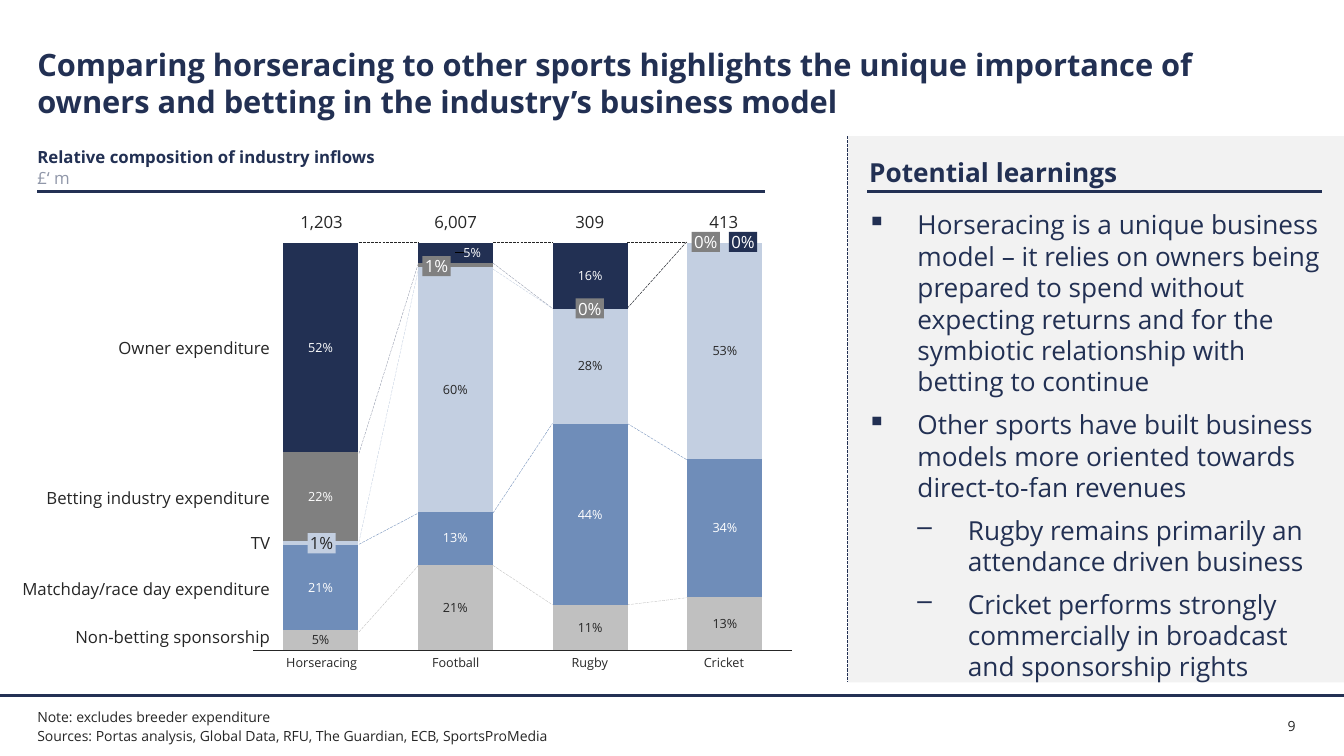
from lxml.etree import SubElement
from pptx import Presentation
from pptx.chart.data import CategoryChartData
from pptx.dml.color import RGBColor
from pptx.enum.chart import XL_CHART_TYPE, XL_LABEL_POSITION, XL_TICK_LABEL_POSITION, XL_TICK_MARK
from pptx.enum.dml import MSO_LINE
from pptx.enum.shapes import MSO_CONNECTOR, MSO_SHAPE
from pptx.enum.text import MSO_ANCHOR, PP_ALIGN
from pptx.oxml import parse_xml
from pptx.oxml.ns import nsdecls, qn
from pptx.util import Pt

PX = 9144
FONT = "Open Sans"
NAVY = RGBColor(0x22, 0x30, 0x53)
RULE = RGBColor(0x23, 0x31, 0x54)
INK = RGBColor(0x26, 0x26, 0x26)
MUTED = RGBColor(0x90, 0x97, 0xA9)
PANEL = RGBColor(0xF2, 0xF2, 0xF2)
SILVER = RGBColor(0xC0, 0xC0, 0xC0)
BLUE = RGBColor(0x6F, 0x8D, 0xB9)
PALE = RGBColor(0xC3, 0xCF, 0xE1)
GREY = RGBColor(0x80, 0x80, 0x80)
WHITE = RGBColor(0xFF, 0xFF, 0xFF)

SPORTS = [("Horseracing", "1,203"), ("Football", "6,007"), ("Rugby", "309"), ("Cricket", "413")]
COLUMN_STEP = 133
SERIES = [
    ("Non-betting sponsorship", (5, 21, 11, 13), SILVER, INK, (0, 1, 2, 3), 632),
    ("Matchday/race day expenditure", (21, 13, 44, 34), BLUE, WHITE, (0, 1, 2, 3), 584),
    ("TV", (1, 60, 28, 53), PALE, INK, (1, 2, 3), 539),
    ("Betting industry expenditure", (22, 1, 0, 0), GREY, WHITE, (0,), 494),
    ("Owner expenditure", (52, 5, 16, 0), NAVY, WHITE, (0, 1, 2), 345),
]
BRIDGES = [
    [(240, 240, INK), (450, 261, MUTED), (538, 267, PALE), (540, 509, BLUE), (627, 561, SILVER)],
    [(240, 240, INK), (261, 306, MUTED), (267, 306, PALE), (509, 420, BLUE), (561, 600, SILVER)],
    [(240, 240, INK), (306, 240, MUTED), (306, 240, INK), (420, 456, BLUE), (600, 593, SILVER)],
]
TAGS = [
    ("1%", 419, 254, GREY, WHITE), ("1%", 305, 529, PALE, INK), ("0%", 571, 296, GREY, WHITE),
    ("0%", 686, 230, GREY, WHITE), ("0%", 723, 230, NAVY, WHITE),
]
LEARNINGS = [
    (0, "Horseracing is a unique business model – it relies on owners being prepared to spend "
        "without expecting returns and for the symbiotic relationship with betting to continue"),
    (0, "Other sports have built business models more oriented towards direct-to-fan revenues"),
    (1, "Rugby remains primarily an attendance driven business"),
    (1, "Cricket performs strongly commercially in broadcast and sponsorship rights"),
]


def set_font(font, size, color, bold=False):
    """Apply typeface, size, colour and weight."""
    font.name, font.size, font.bold = FONT, Pt(size), bold
    font.color.rgb = color


def write(shape, text, size, color, bold=False, align=PP_ALIGN.LEFT, anchor=MSO_ANCHOR.TOP, wrap=True):
    """Fill a shape with text without margins and return its paragraphs."""
    frame = shape.text_frame
    frame.text = text
    frame.word_wrap, frame.vertical_anchor = wrap, anchor
    frame.margin_left = frame.margin_right = frame.margin_top = frame.margin_bottom = 0
    for paragraph in frame.paragraphs:
        paragraph.alignment = align
        for run in paragraph.runs:
            set_font(run.font, size, color, bold)
    return frame.paragraphs


def add_text(slide, box, text, size, color, **style):
    """Add a text box and return its paragraphs."""
    shape = slide.shapes.add_textbox(*(value * PX for value in box))
    return write(shape, text, size, color, **style)


def add_rectangle(slide, box, color):
    """Add a plain filled rectangle."""
    shape = slide.shapes.add_shape(MSO_SHAPE.RECTANGLE, *(value * PX for value in box))
    shape.shadow.inherit = False
    shape.fill.solid()
    shape.fill.fore_color.rgb = color
    shape.line.fill.background()
    return shape


def add_line(slide, start, end, color, width, dash=None):
    """Add a straight line without a shadow."""
    points = (value * PX for value in start + end)
    line = slide.shapes.add_connector(MSO_CONNECTOR.STRAIGHT, *points)
    line.line.color.rgb = color
    line.line.width = Pt(width)
    if dash:
        line.line.dash_style = dash
    SubElement(line._element.spPr, qn("a:effectLst"))


def manual_layout(**values):
    """Build a chart layout element from its named values."""
    items = "".join(f'<c:{name} val="{value}"/>' for name, value in values.items())
    return parse_xml(f'<c:layout {nsdecls("c")}><c:manualLayout>{items}</c:manualLayout></c:layout>')


def add_inflow_chart(slide):
    """Add the stacked composition chart with its labels."""
    data = CategoryChartData(number_format='0"%"')
    data.categories = [sport for sport, _ in SPORTS]
    for name, values, *_ in SERIES:
        data.add_series(name, values)
    box = (value * PX for value in (240, 228, 557, 430))
    chart = slide.shapes.add_chart(XL_CHART_TYPE.COLUMN_STACKED_100, *box, data).chart
    set_font(chart.font, 10, INK)
    chart.has_legend = chart.has_title = False
    chart.value_axis.has_major_gridlines = False
    chart.value_axis.visible = False
    axis = chart.category_axis
    axis.tick_label_position = XL_TICK_LABEL_POSITION.NONE
    axis.major_tick_mark = axis.minor_tick_mark = XL_TICK_MARK.NONE
    axis.format.line.color.rgb = INK
    axis.format.line.width = Pt(0.75)
    plot = chart.plots[0]
    plot.gap_width, plot.overlap, plot.vary_by_categories = 80, 100, False
    for series, (_, _, color, label_color, labelled, _) in zip(plot.series, SERIES):
        series.format.fill.solid()
        series.format.fill.fore_color.rgb = color
        series.data_labels.show_value = False
        for index in labelled:
            label = series.points[index].data_label
            set_font(label.font, 9, label_color)
            label.position = XL_LABEL_POSITION.CENTER
    area = chart._chartSpace.chart.plotArea
    for layout in area.findall(qn("c:layout")):
        area.remove(layout)
    area.insert(0, manual_layout(layoutTarget="inner", xMode="edge", yMode="edge",
                                 x=0.02, y=0.03, w=0.96, h=0.94))
    football_owner = plot.series[4]._element.findall(".//" + qn("c:dLbl"))[1]
    for layout in football_owner.findall(qn("c:layout")):
        football_owner.remove(layout)
    football_owner.insert(1, manual_layout(x=0.03, y=0))


def add_learnings(slide):
    """Add the panel with its heading and bulleted learnings."""
    add_text(slide, (862, 155, 449, 31), "Potential learnings", 18.7, NAVY,
             bold=True, anchor=MSO_ANCHOR.BOTTOM)
    add_line(slide, (860, 190), (1311, 190), RULE, 1.5)
    text = "\n".join(learning for _, learning in LEARNINGS)
    paragraphs = add_text(slide, (845, 207, 466, 474), text, 18.7, NAVY)
    for paragraph, (level, _) in zip(paragraphs, LEARNINGS):
        properties = paragraph._p.get_or_add_pPr()
        properties.set("marL", str((65 + 50 * level) * PX))
        properties.set("indent", str(-50 * PX))
        bullet_color = SubElement(properties, qn("a:buClr"))
        SubElement(bullet_color, qn("a:srgbClr")).set("val", str(NAVY))
        SubElement(properties, qn("a:buChar")).set("char", "▪–"[level])
        paragraph.level = level
        paragraph.space_after = Pt(8)


def main():
    """Build the slide and save it."""
    presentation = Presentation()
    presentation.slide_width, presentation.slide_height = 1333 * PX, 750 * PX
    slide = presentation.slides.add_slide(presentation.slide_layouts[6])

    add_line(slide, (0, 690), (1333, 690), RULE, 2)
    add_text(slide, (1277, 709, 50, 20), "9", 10, INK, anchor=MSO_ANCHOR.BOTTOM)
    add_rectangle(slide, (841, 135, 492, 542), PANEL)
    add_line(slide, (841, 135), (841, 676), NAVY, 0.75, MSO_LINE.SQUARE_DOT)
    add_text(slide, (37, 45, 1260, 82),
             "Comparing horseracing to other sports highlights the unique importance of owners "
             "and betting in the industry’s business model", 22, NAVY, bold=True)
    subtitle = add_text(slide, (37, 146, 585, 40),
                        "Relative composition of industry inflows\n£‘ m", 12, NAVY, bold=True)
    set_font(subtitle[1].runs[0].font, 12, MUTED)
    add_line(slide, (37, 190), (759, 190), RULE, 1.5)
    notes = add_text(slide, (37, 701, 1123, 39),
                     "Note: excludes breeder expenditure\n"
                     "Sources: Portas analysis, Global Data, RFU, The Guardian, ECB, SportsProMedia",
                     10, INK, anchor=MSO_ANCHOR.MIDDLE)
    notes[1].space_before = Pt(2)

    for gap, bridges in enumerate(BRIDGES):
        left = 356 + gap * COLUMN_STEP
        for start, end, color in bridges:
            add_line(slide, (left, start), (left + 59, end), color, 0.25, MSO_LINE.LONG_DASH)
    add_inflow_chart(slide)
    for column, (sport, total) in enumerate(SPORTS):
        left = 264 + column * COLUMN_STEP
        add_text(slide, (left, 210, 110, 20), total, 12, INK,
                 align=PP_ALIGN.CENTER, anchor=MSO_ANCHOR.BOTTOM)
        add_text(slide, (left, 650, 110, 15), sport, 9, INK, align=PP_ALIGN.CENTER)
    for name, *_, middle in SERIES:
        add_text(slide, (18, middle - 10, 250, 20), name, 12, INK,
                 align=PP_ALIGN.RIGHT, anchor=MSO_ANCHOR.MIDDLE)
    for text, left, top, fill, color in TAGS:
        tag = add_rectangle(slide, (left, top, 28, 20), fill)
        write(tag, text, 12, color, align=PP_ALIGN.CENTER, anchor=MSO_ANCHOR.MIDDLE, wrap=False)
    add_learnings(slide)
    presentation.save("out.pptx")


if __name__ == "__main__":
    main()
